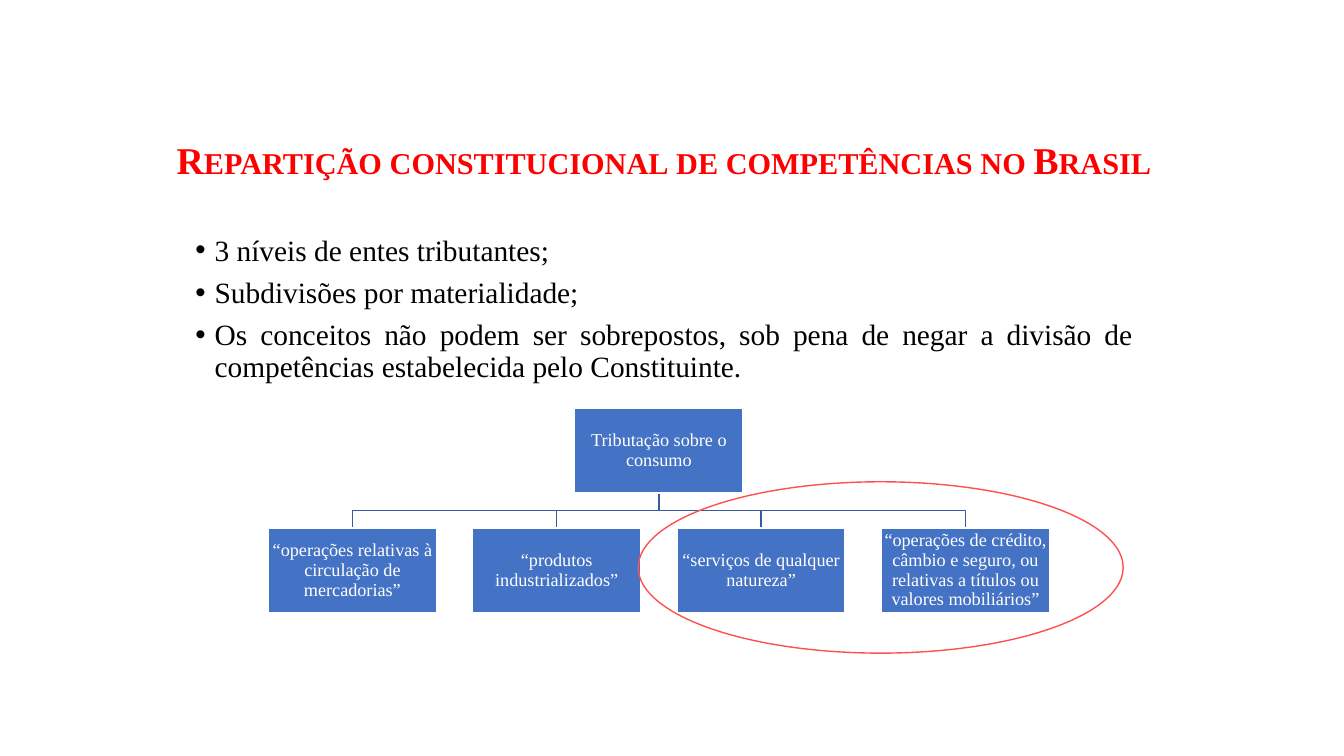
from lxml import etree
from pptx import Presentation
from pptx.dml.color import RGBColor
from pptx.enum.shapes import MSO_SHAPE
from pptx.enum.text import MSO_ANCHOR, PP_ALIGN
from pptx.oxml.ns import qn
from pptx.util import Inches, Pt

RECTANGLE, ELLIPSE = MSO_SHAPE.RECTANGLE, MSO_SHAPE.OVAL
MIDDLE, TOP = MSO_ANCHOR.MIDDLE, MSO_ANCHOR.TOP
CENTER, JUSTIFY = PP_ALIGN.CENTER, PP_ALIGN.JUSTIFY

FONT = "Times New Roman"
TITLE = "Repartição constitucional de competências no Brasil"
POINTS = [
    "3 níveis de entes tributantes;",
    "Subdivisões por materialidade;",
    "Os conceitos não podem ser sobrepostos, sob pena de negar a divisão de "
    "competências estabelecida pelo Constituinte.",
]
ROOT = "Tributação sobre o consumo"
BRANCHES = [
    "“operações relativas à circulação de mercadorias”",
    "“produtos industrializados”",
    "“serviços de qualquer natureza”",
    "“operações de crédito, câmbio e seguro, ou relativas a títulos ou "
    "valores mobiliários”",
]
NODE_WIDTH, NODE_HEIGHT = 1.67, 0.84


def color(hex_value):
    return RGBColor.from_string(hex_value)


def set_frame(frame, anchor, horizontal, vertical):
    frame.word_wrap = True
    frame.vertical_anchor = anchor
    frame.margin_left = frame.margin_right = Inches(horizontal)
    frame.margin_top = frame.margin_bottom = Inches(vertical)


def add_run(paragraph, text, size, hex_value, bold=False):
    run = paragraph.add_run()
    run.text = text
    run.font.name = FONT
    run.font.size = Pt(size)
    run.font.bold = bold
    run.font.color.rgb = color(hex_value)
    return run


def style_line(shape, hex_value):
    shape.shadow.inherit = False
    shape.line.color.rgb = color(hex_value)
    shape.line.width = Pt(1)


def add_title(slide, left, top, width, height):
    box = slide.shapes.add_textbox(*map(Inches, (left, top, width, height)))
    set_frame(box.text_frame, MIDDLE, 0.06, 0.03)
    paragraph = box.text_frame.paragraphs[0]
    paragraph.alignment = CENTER
    run = add_run(paragraph, TITLE, 27, "FF0000", bold=True)
    run.font._element.set("cap", "small")


def add_points(slide, left, top, width, height):
    box = slide.shapes.add_textbox(*map(Inches, (left, top, width, height)))
    frame = box.text_frame
    set_frame(frame, TOP, 0.1, 0.05)
    for index, point in enumerate(POINTS):
        paragraph = frame.add_paragraph() if index else frame.paragraphs[0]
        paragraph.alignment = JUSTIFY
        paragraph.line_spacing = 0.9
        if index:
            paragraph.space_before = Pt(7.5)
        # Hanging bullet
        properties = paragraph._p.get_or_add_pPr()
        properties.set("marL", str(Inches(0.19)))
        properties.set("indent", str(-Inches(0.19)))
        font = etree.SubElement(properties, qn("a:buFont"))
        font.set("typeface", "Arial")
        bullet = etree.SubElement(properties, qn("a:buChar"))
        bullet.set("char", "•")
        add_run(paragraph, point, 21, "000000")


def add_node(slide, text, left, top):
    node = slide.shapes.add_shape(
        RECTANGLE, *map(Inches, (left, top, NODE_WIDTH, NODE_HEIGHT)))
    style_line(node, "FFFFFF")
    node.fill.solid()
    node.fill.fore_color.rgb = color("4472C4")
    set_frame(node.text_frame, MIDDLE, 0.01, 0.01)
    paragraph = node.text_frame.paragraphs[0]
    paragraph.alignment = CENTER
    paragraph.line_spacing = 0.9
    add_run(paragraph, text, 13, "FFFFFF")


def add_branch_line(slide, start_x, start_y, end_x, end_y):
    middle_y = (start_y + end_y) / 2
    builder = slide.shapes.build_freeform(Inches(start_x), Inches(start_y))
    corners = [(start_x, middle_y), (end_x, middle_y), (end_x, end_y)]
    builder.add_line_segments(
        [(Inches(x), Inches(y)) for x, y in corners], close=False)
    line = builder.convert_to_shape()
    style_line(line, "365B9D")
    line.fill.background()


def add_tree(slide, left, top, width, height):
    step = (width - NODE_WIDTH) / (len(BRANCHES) - 1)
    branch_top = top + height - NODE_HEIGHT
    center = left + width / 2
    lefts = [left + index * step for index in range(len(BRANCHES))]
    # Lines lie behind the nodes
    for branch_left in lefts:
        add_branch_line(slide, center, top + NODE_HEIGHT,
                        branch_left + NODE_WIDTH / 2, branch_top)
    add_node(slide, ROOT, center - NODE_WIDTH / 2, top)
    for text, branch_left in zip(BRANCHES, lefts):
        add_node(slide, text, branch_left, branch_top)


def add_highlight(slide, left, top, width, height):
    ellipse = slide.shapes.add_shape(
        ELLIPSE, *map(Inches, (left, top, width, height)))
    style_line(ellipse, "FF5050")
    ellipse.fill.background()


def main():
    presentation = Presentation()
    presentation.slide_width = Inches(13.33)
    presentation.slide_height = Inches(7.5)
    slide = presentation.slides.add_slide(presentation.slide_layouts[6])
    add_title(slide, 1.47, 1.04, 10.23, 1.09)
    add_points(slide, 1.84, 2.29, 9.5, 1.6)
    add_tree(slide, 2.66, 4.05, 7.75, 2.03)
    add_highlight(slide, 6.33, 4.78, 4.81, 1.7)
    presentation.save("out.pptx")


if __name__ == "__main__":
    main()
